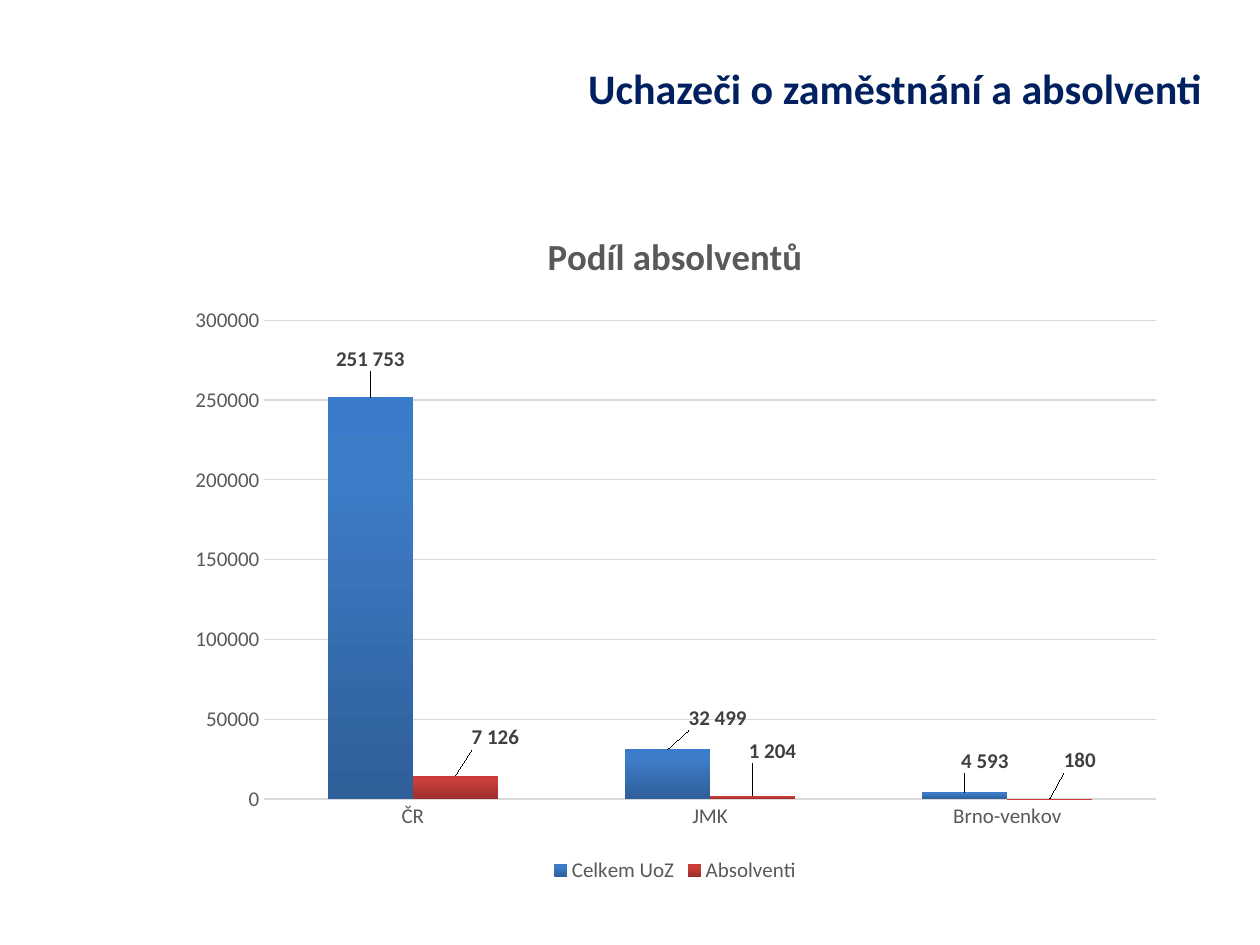
import copy

import pptx
import pptx.chart.data
import pptx.dml.color
import pptx.enum.chart
import pptx.enum.text
import pptx.oxml
import pptx.oxml.ns
import pptx.util

Pt = pptx.util.Pt
RGBColor = pptx.dml.color.RGBColor

NAVY = RGBColor(0x00, 0x20, 0x60)
GRAY = RGBColor(0x59, 0x59, 0x59)
DARK_GRAY = RGBColor(0x40, 0x40, 0x40)
LIGHT_GRAY = RGBColor(0xD9, 0xD9, 0xD9)
BLUES = (RGBColor(0x2F, 0x5F, 0x99), RGBColor(0x3D, 0x7C, 0xC7), RGBColor(0x3A, 0x7C, 0xCB))
REDS = (RGBColor(0x9C, 0x2F, 0x2D), RGBColor(0xCB, 0x3E, 0x3A), RGBColor(0xCE, 0x3B, 0x37))
STOP_POSITIONS = (0, 0.8, 1)
FONT = "Calibri"

CATEGORIES = ("ČR", "JMK", "Brno-venkov")
SERIES = (
    ("Celkem UoZ", (251689, 31200, 4365), BLUES, (
        ("251 753", 0, -0.03), ("32 499", 0.05, -0.02), ("4 593", 0.02, -0.02))),
    ("Absolventi", (14654, 1941, 287), REDS, (
        ("7 126", 0.04, -0.03), ("1 204", 0.02, -0.04), ("180", 0.03, -0.03))),
)


def set_font(font, size, color, bold=False):
    font.name = FONT
    font.size = Pt(size)
    font.bold = bold
    font.color.rgb = color


def manual_layout(**values):
    children = "".join(f'<c:{name} val="{value}"/>' for name, value in values.items())
    return pptx.oxml.parse_xml(
        f'<c:layout {pptx.oxml.ns.nsdecls("c")}><c:manualLayout>{children}'
        "</c:manualLayout></c:layout>")


def place_title(slide, left, top, width, height):
    title = slide.shapes.title
    title.left, title.top, title.width, title.height = left, top, width, height
    frame = title.text_frame
    frame.text = "Uchazeči o zaměstnání a absolventi"
    frame.vertical_anchor = pptx.enum.text.MSO_ANCHOR.TOP
    paragraph = frame.paragraphs[0]
    paragraph.alignment = pptx.enum.text.PP_ALIGN.RIGHT
    set_font(paragraph.font, 24, NAVY, True)


def format_axes(chart):
    for axis in (chart.category_axis, chart.value_axis):
        axis.major_tick_mark = pptx.enum.chart.XL_TICK_MARK.NONE
        set_font(axis.tick_labels.font, 12, GRAY)
    chart.category_axis.format.line.color.rgb = LIGHT_GRAY
    chart.category_axis.format.line.width = Pt(1)
    value_axis = chart.value_axis
    value_axis.minimum_scale, value_axis.maximum_scale = 0, 300000
    value_axis.major_unit = 50000
    value_axis.format.line.fill.background()
    value_axis.major_gridlines.format.line.color.rgb = LIGHT_GRAY
    value_axis.major_gridlines.format.line.width = Pt(0.75)


def fill_gradients(chart):
    for series in chart.plots[0].series:
        series.format.fill.gradient()
        series.format.fill.gradient_angle = 90
    for stop_list in chart.element.xpath(".//a:gsLst"):
        stop_list.append(copy.deepcopy(stop_list[0]))
    for series, (_, _, colors, _) in zip(chart.plots[0].series, SERIES):
        stops = series.format.fill.gradient_stops
        for stop, color, position in zip(stops, colors, STOP_POSITIONS):
            stop.color.rgb = color
            stop.position = position


def label_points(chart):
    offsets = []
    for series, (_, _, _, labels) in zip(chart.plots[0].series, SERIES):
        set_font(series.data_labels.font, 12, DARK_GRAY, True)
        series.data_labels.show_value = True
        for index, (text, across, down) in enumerate(labels):
            label = series.points[index].data_label
            label.text_frame.text = text
            set_font(label.text_frame.paragraphs[0].runs[0].font, 12, DARK_GRAY, True)
            label.position = pptx.enum.chart.XL_LABEL_POSITION.OUTSIDE_END
            offsets.append((across, down))
    for element, (across, down) in zip(chart.element.xpath(".//c:dLbl"), offsets):
        element.insert(1, manual_layout(x=across, y=down))


def place_chart(slide, left, top, width, height):
    data = pptx.chart.data.CategoryChartData()
    data.categories = CATEGORIES
    for name, values, _, _ in SERIES:
        data.add_series(name, values)
    chart = slide.shapes.add_chart(
        pptx.enum.chart.XL_CHART_TYPE.COLUMN_CLUSTERED, left, top, width, height, data).chart
    chart.font.name = FONT
    chart.font.size = Pt(10)
    chart.has_title = True
    chart.chart_title.text_frame.text = "Podíl absolventů"
    set_font(chart.chart_title.text_frame.paragraphs[0].font, 21, GRAY, True)
    chart.chart_title.include_in_layout = False
    chart.has_legend = True
    chart.legend.position = pptx.enum.chart.XL_LEGEND_POSITION.BOTTOM
    chart.legend.include_in_layout = False
    set_font(chart.legend.font, 12, GRAY)
    plot = chart.plots[0]
    plot.gap_width = 150
    plot.overlap = 0
    plot.vary_by_categories = False
    format_axes(chart)
    fill_gradients(chart)
    label_points(chart)
    plot_area = chart.element.xpath(".//c:plotArea")[0]
    for layout in plot_area.xpath("./c:layout"):
        plot_area.remove(layout)
    plot_area.insert(0, manual_layout(
        layoutTarget="inner", xMode="edge", yMode="edge", x=0.09, y=0.17, w=0.89, h=0.7))


def main():
    presentation = pptx.Presentation()
    presentation.slide_width, presentation.slide_height = Pt(720), Pt(540)
    slide = presentation.slides.add_slide(presentation.slide_layouts[5])
    place_title(slide, Pt(173), Pt(32), Pt(521), Pt(73))
    place_chart(slide, Pt(99.5), Pt(116.5), Pt(572.5), Pt(391))
    presentation.save("out.pptx")


if __name__ == "__main__":
    main()
